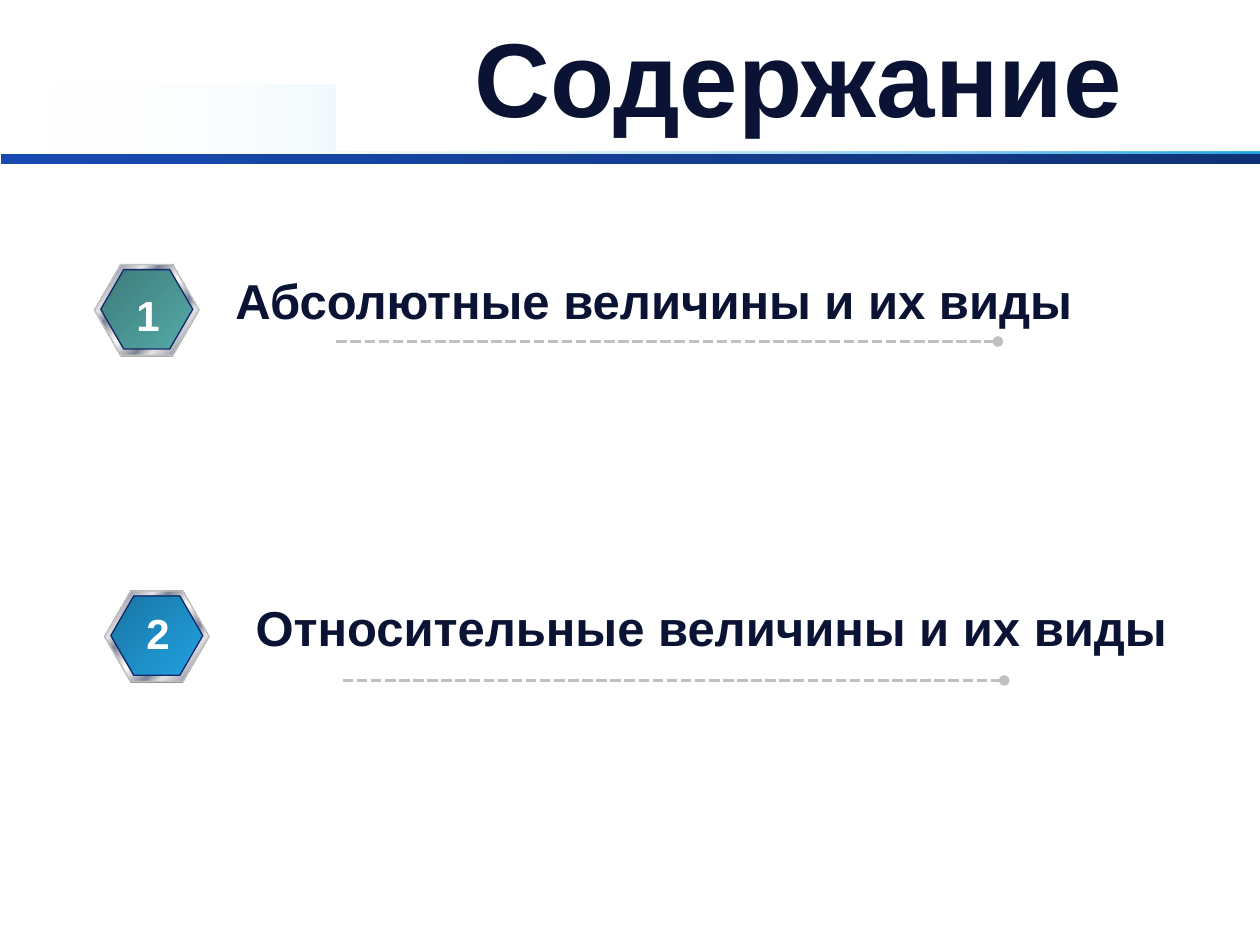
from dataclasses import dataclass

from lxml import etree
from pptx import Presentation
from pptx.dml.color import RGBColor
from pptx.enum.dml import MSO_LINE
from pptx.enum.shapes import MSO_CONNECTOR, MSO_SHAPE
from pptx.enum.text import MSO_ANCHOR, MSO_AUTO_SIZE, PP_ALIGN
from pptx.oxml import parse_xml
from pptx.oxml.ns import nsdecls, qn
from pptx.util import Inches, Pt

RECTANGLE, HEXAGON = MSO_SHAPE.RECTANGLE, MSO_SHAPE.HEXAGON
STRAIGHT, DOTTED = MSO_CONNECTOR.STRAIGHT, MSO_LINE.SQUARE_DOT
LEFT, CENTER, JUSTIFY = PP_ALIGN.LEFT, PP_ALIGN.CENTER, PP_ALIGN.JUSTIFY
TOP, MIDDLE = MSO_ANCHOR.TOP, MSO_ANCHOR.MIDDLE
GROW, FIXED = MSO_AUTO_SIZE.SHAPE_TO_FIT_TEXT, MSO_AUTO_SIZE.NONE

# Grid of 10 columns by 7.5 rows
WIDTH, HEIGHT = Inches(10), Inches(7.5)
COLUMN, ROW = WIDTH / 10, HEIGHT / 7.5

COLORS = {
    "white": "FFFFFF", "ink": "0A1334", "sky": "22A2E2", "ocean": "1874A2",
    "royal": "184BB2", "navy": "103175", "outline": "132767",
    "pine": "3D7A79", "teal": "55ABA9",
    "shade": "808080", "silver": "C0C0C0", "light": "E6E6E6", "steel": "7D8496",
}
METAL = [(0, "light"), (8, "steel"), (26, "light"), (34, "steel"), (46, "light"),
         (50, "white"), (54, "light"), (66, "steel"), (74, "light"),
         (92, "steel"), (100, "light")]


@dataclass
class Box:
    column: float
    row: float
    columns: float
    rows: float

    def lengths(self) -> list[int]:
        return [round(self.column * COLUMN), round(self.row * ROW),
                round(self.columns * COLUMN), round(self.rows * ROW)]


@dataclass
class Topic:
    number: str
    title: str
    badge: tuple[float, float]
    number_box: Box
    title_box: Box
    rule: tuple[float, float]
    face: tuple[str, str]
    align: int
    space_before: float
    number_wraps: bool


TOPICS = [
    Topic("1", "Абсолютные величины и их виды", (0.75, 2.1),
          Box(0.98, 2.25, 0.39, 0.5), Box(1.77, 2.1, 6.93, 0.88), (2.67, 2.71),
          ("pine", "teal"), JUSTIFY, 5.6, False),
    Topic("2", "Относительные величины и их виды", (0.83, 4.69),
          Box(1.06, 4.77, 0.39, 0.5), Box(1.93, 4.69, 7.64, 0.57), (2.72, 5.4),
          ("ocean", "sky"), LEFT, 0, True),
]


def rgb(name: str) -> RGBColor:
    return RGBColor.from_string(COLORS[name])


def apply(target, formats: dict) -> None:
    for attribute, value in formats.items():
        setattr(target, attribute, value)


def fill_gradient(shape, stops: list, angle: int, clear_start: bool = False) -> None:
    gradient = parse_xml(f'<a:gradFill {nsdecls("a")} rotWithShape="1"><a:gsLst/>'
                         f'<a:lin ang="{angle * 60000}" scaled="0"/></a:gradFill>')
    for position, name in stops:
        stop = etree.SubElement(gradient[0], qn("a:gs"), pos=str(position * 1000))
        color = etree.SubElement(stop, qn("a:srgbClr"), val=COLORS[name])
        if clear_start and position == 0:
            etree.SubElement(color, qn("a:alpha"), val="0")
    properties = shape.fill._xPr
    shape.fill.background()
    properties.replace(properties.find(qn("a:noFill")), gradient)


def add_plate(slide, kind: int, box: Box, outline: str | None = None):
    plate = slide.shapes.add_shape(kind, *box.lengths())
    plate.shadow.inherit = False
    if kind == HEXAGON:
        plate.adjustments[0] = 0.289
    if outline:
        plate.line.color.rgb = rgb(outline)
        plate.line.width = Pt(0.75)
    else:
        plate.line.fill.background()
    return plate


def add_text(slide, box: Box, wording: str, size: int, color: str = "ink",
             align: int = CENTER, anchor: int = TOP, autosize: int = GROW,
             wraps: bool = True, space_before: float = 0):
    holder = slide.shapes.add_textbox(*box.lengths())
    frame = holder.text_frame
    apply(frame, {"word_wrap": wraps, "auto_size": autosize, "vertical_anchor": anchor})
    paragraph = frame.paragraphs[0]
    apply(paragraph, {"alignment": align, "space_before": Pt(space_before)})
    run = paragraph.add_run()
    run.text = wording
    apply(run.font, {"name": "Arial", "size": Pt(size), "bold": True})
    run.font.color.rgb = rgb(color)
    return holder


def add_badge(slide, topic: Topic) -> None:
    column, row = topic.badge
    shade = add_plate(slide, HEXAGON, Box(column, row + 0.01, 0.83, 0.72))
    shade.fill.solid()
    shade.fill.fore_color.rgb = rgb("shade")
    rim = add_plate(slide, HEXAGON, Box(column, row, 0.83, 0.72), "silver")
    fill_gradient(rim, METAL, 45)
    face = add_plate(slide, HEXAGON, Box(column + 0.05, row + 0.04, 0.73, 0.63), "outline")
    fill_gradient(face, list(zip((0, 100), topic.face)), 45)


def add_rule(slide, start: tuple[float, float]) -> None:
    left, top, right, bottom = Box(*start, start[0] + 5.25, start[1]).lengths()
    rule = slide.shapes.add_connector(STRAIGHT, left, top, right, bottom)
    rule.line.color.rgb = rgb("silver")
    apply(rule.line, {"width": Pt(2), "dash_style": DOTTED})
    etree.SubElement(rule.line._get_or_add_ln(), qn("a:tailEnd"), type="oval")
    etree.SubElement(rule._element.spPr, qn("a:effectLst"))


def main() -> None:
    deck = Presentation()
    deck.slide_width, deck.slide_height = WIDTH, HEIGHT
    slide = deck.slides.add_slide(deck.slide_layouts[6])

    # Header bands
    glow = add_plate(slide, RECTANGLE, Box(0.33, 0.67, 9.67, 0.58))
    fill_gradient(glow, [(0, "white"), (100, "sky")], 0, clear_start=True)
    bar = add_plate(slide, RECTANGLE, Box(0.01, 1.22, 10, 0.08))
    fill_gradient(bar, [(0, "royal"), (100, "navy")], 0)

    # Heading
    heading = add_text(slide, Box(2.67, 0, 7.33, 1.2), "Содержание", 60,
                       anchor=MIDDLE, autosize=FIXED)
    heading.fill.solid()
    heading.fill.fore_color.rgb = rgb("white")

    # Numbered topics
    for topic in TOPICS:
        add_badge(slide, topic)
        add_rule(slide, topic.rule)
        add_text(slide, topic.title_box, topic.title, 28, align=topic.align,
                 space_before=topic.space_before)
        add_text(slide, topic.number_box, topic.number, 24, "white",
                 wraps=topic.number_wraps)

    deck.save("out.pptx")


if __name__ == "__main__":
    main()
